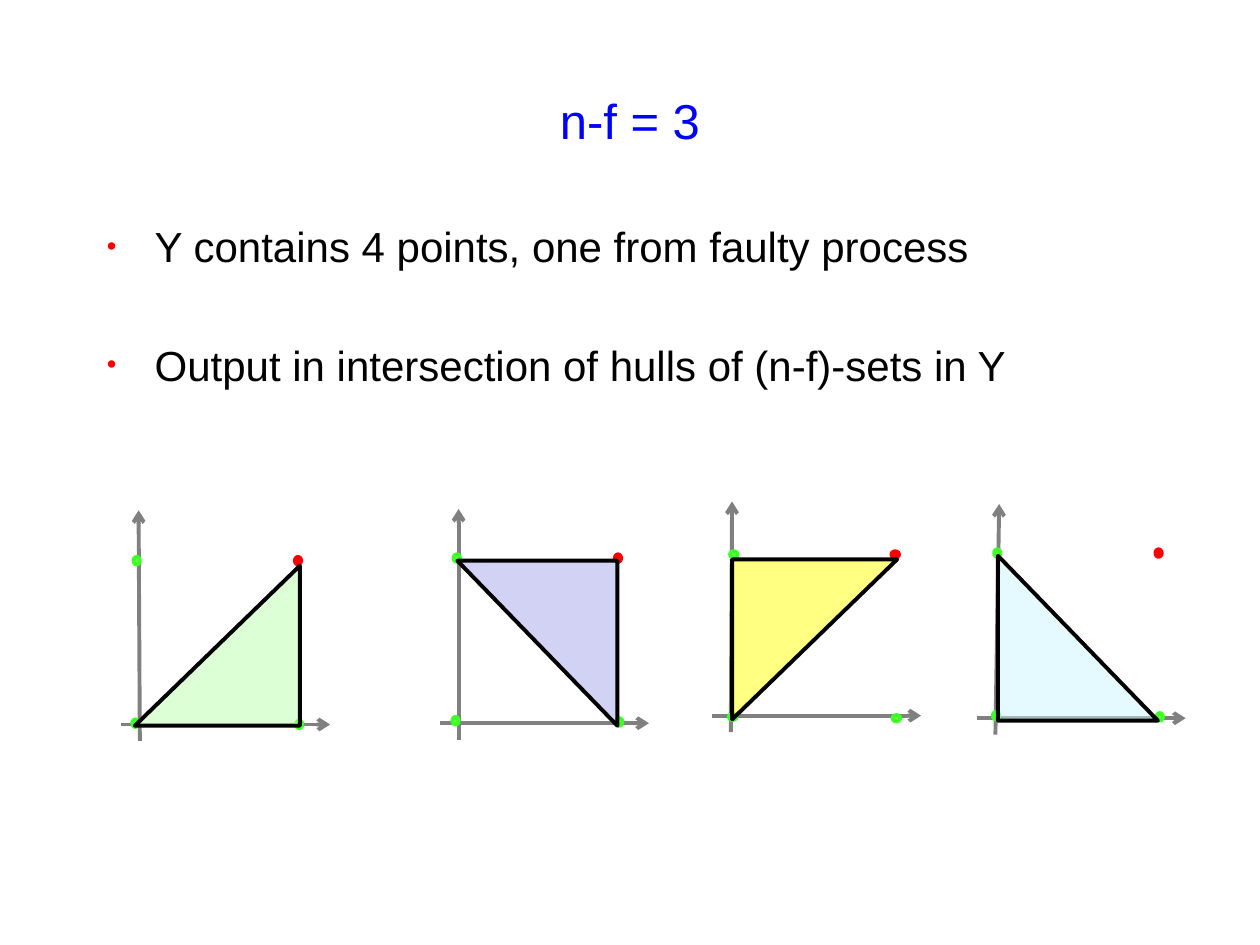
from dataclasses import dataclass

import lxml.etree
import pptx
import pptx.dml.color
import pptx.enum.shapes
import pptx.enum.text
import pptx.oxml.ns
import pptx.util

Inches = pptx.util.Inches
Pt = pptx.util.Pt
qn = pptx.oxml.ns.qn
MSO_SHAPE = pptx.enum.shapes.MSO_SHAPE


@dataclass(frozen=True)
class Theme:
    font: str = "Arial"
    title_size: int = 28
    body_size: int = 24
    line_width: float = 2.25
    title: str = "0000FF"
    text: str = "000000"
    bullet: str = "FF0000"
    axis: str = "808080"
    outline: str = "000000"
    correct: str = "7AFF44"
    correct_line: str = "3DFF28"
    faulty: str = "FF0000"


@dataclass(frozen=True)
class Plot:
    x: float
    y: float
    lean: float
    dot_x: float
    dot_y: float
    rotation: int
    fill: str


THEME = Theme()
PLOTS = [
    Plot(1.11, 5.75, -0.01, 1.06, 4.42, 270, "BAFFAC"),
    Plot(3.64, 5.74, 0, 3.6, 4.4, 180, "A5A5E9"),
    Plot(5.8, 5.68, 0.01, 5.8, 4.37, 90, "FFFF00"),
    Plot(7.9, 5.7, 0.03, 7.89, 4.36, 0, "C9F6FF"),
]
CORRECT_OFFSETS = [(0, 0), (-0.01, 1.29), (1.29, 1.3)]
FAULTY_OFFSET = (1.28, 0)
HULL_OFFSET = (0.03, 0.05)
HULL_SIZE = (1.27, 1.31)
DOT_SIZE = (0.05, 0.06)


def rgb(color: str) -> pptx.dml.color.RGBColor:
    return pptx.dml.color.RGBColor.from_string(color)


def add_text(slide, box: tuple, lines: list[str], size: int, color: str):
    tf = slide.shapes.add_textbox(*map(Inches, box)).text_frame
    tf.word_wrap = True
    tf.text = "\n".join(lines)
    for p in tf.paragraphs:
        for r in p.runs:
            r.font.name = THEME.font
            r.font.size = Pt(size)
            r.font.color.rgb = rgb(color)
    return tf


def add_bullet(p) -> None:
    pPr = p._p.get_or_add_pPr()
    pPr.set("marL", str(Inches(0.38)))
    pPr.set("indent", str(-Inches(0.38)))
    clr = lxml.etree.SubElement(pPr, qn("a:buClr"))
    lxml.etree.SubElement(clr, qn("a:srgbClr"), val=THEME.bullet)
    lxml.etree.SubElement(pPr, qn("a:buSzPct"), val="65000")
    lxml.etree.SubElement(pPr, qn("a:buFont"), typeface=THEME.font)
    lxml.etree.SubElement(pPr, qn("a:buChar"), char="•")


def add_axis(slide, start: tuple, end: tuple) -> None:
    line = slide.shapes.add_connector(
        pptx.enum.shapes.MSO_CONNECTOR.STRAIGHT, *map(Inches, start + end))
    line.line.color.rgb = rgb(THEME.axis)
    line.line.width = Pt(THEME.line_width)
    lxml.etree.SubElement(line.line._get_or_add_ln(), qn("a:tailEnd"), type="arrow")
    lxml.etree.SubElement(line._element.spPr, qn("a:effectLst"))


def add_figure(slide, kind, box: tuple, fill: str, outline: str, rotation: int = 0):
    sp = slide.shapes.add_shape(kind, *map(Inches, box))
    sp.rotation = rotation
    sp.shadow.inherit = False
    sp.fill.solid()
    sp.fill.fore_color.rgb = rgb(fill)
    sp.line.color.rgb = rgb(outline)
    sp.line.width = Pt(THEME.line_width)
    return sp


def add_dot(slide, plot: Plot, offset: tuple, fill: str, outline: str) -> None:
    box = (plot.dot_x + offset[0], plot.dot_y + offset[1]) + DOT_SIZE
    rotation = 270 if plot.rotation == 90 else 0
    add_figure(slide, MSO_SHAPE.OVAL, box, fill, outline, rotation)


def add_plot(slide, plot: Plot) -> None:
    add_axis(slide, (plot.x, plot.y + 0.13), (plot.x + plot.lean, plot.y - 1.7))
    add_axis(slide, (plot.x - 0.15, plot.y), (plot.x + 1.51, plot.y))
    for offset in CORRECT_OFFSETS:
        add_dot(slide, plot, offset, THEME.correct, THEME.correct_line)
    add_dot(slide, plot, FAULTY_OFFSET, THEME.faulty, THEME.faulty)
    box = (plot.dot_x + HULL_OFFSET[0], plot.dot_y + HULL_OFFSET[1]) + HULL_SIZE
    hull = add_figure(slide, MSO_SHAPE.RIGHT_TRIANGLE, box, plot.fill,
                      THEME.outline, plot.rotation)
    color = hull._element.spPr.find(qn("a:solidFill")).find(qn("a:srgbClr"))
    lxml.etree.SubElement(color, qn("a:alpha"), val="49000")


def main() -> None:
    prs = pptx.Presentation()
    prs.slide_width, prs.slide_height = Inches(10), Inches(7.5)
    slide = prs.slides.add_slide(prs.slide_layouts[6])

    title = add_text(slide, (0.75, 0.33, 8.5, 1.25), ["n-f = 3"],
                     THEME.title_size, THEME.title)
    title.vertical_anchor = pptx.enum.text.MSO_ANCHOR.MIDDLE
    title.paragraphs[0].alignment = pptx.enum.text.PP_ALIGN.CENTER

    body = add_text(slide, (0.75, 1.7, 8.5, 5), [
        "Y contains 4 points, one from faulty process",
        "Output in intersection of hulls of (n-f)-sets in Y",
    ], THEME.body_size, THEME.text)
    body.paragraphs[1].space_before = Pt(39)
    for p in body.paragraphs:
        add_bullet(p)

    for plot in PLOTS:
        add_plot(slide, plot)
    prs.save("out.pptx")


if __name__ == "__main__":
    main()
